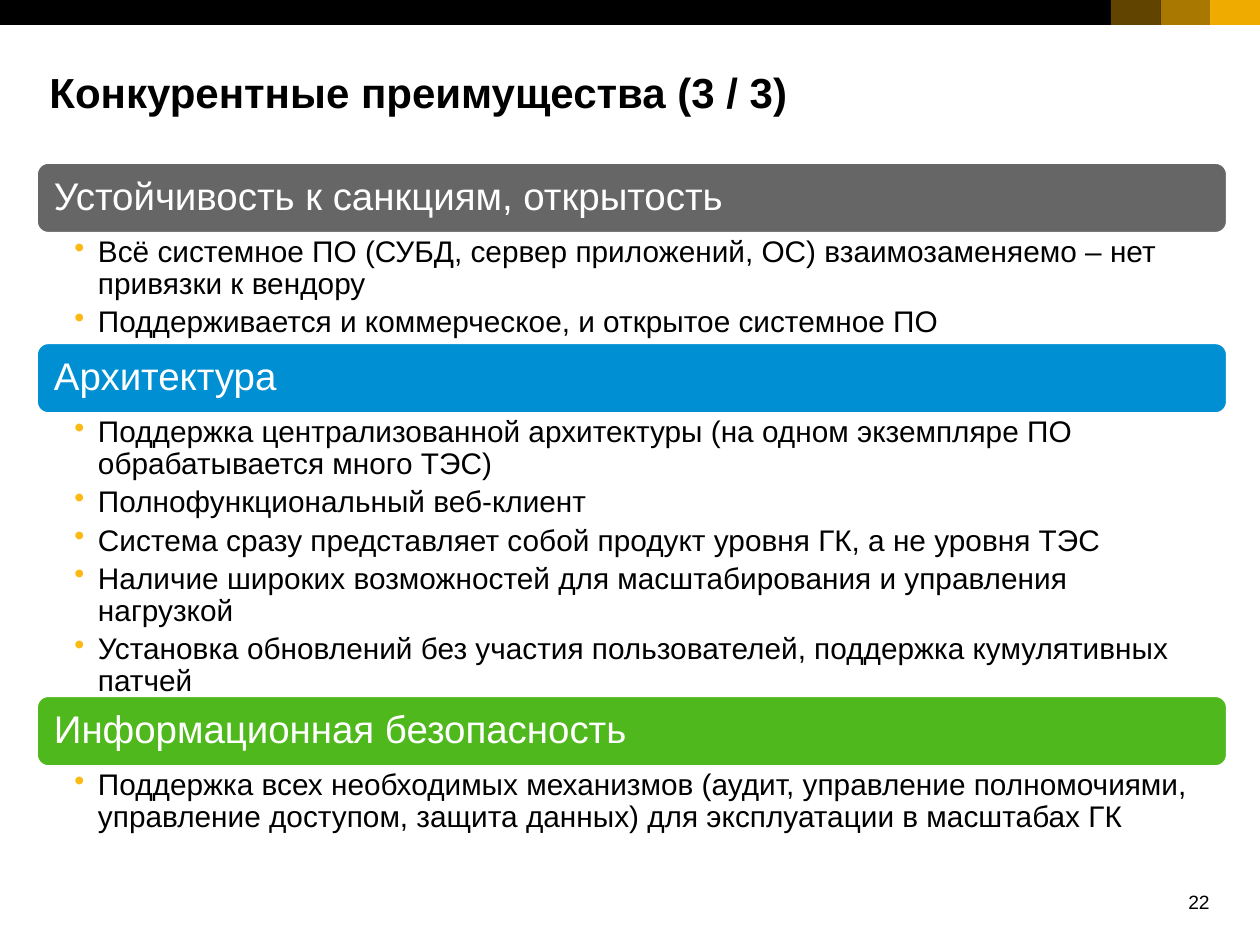
from dataclasses import dataclass

from lxml import etree
from pptx import Presentation
from pptx import util as u
from pptx.dml.color import RGBColor
from pptx.enum import shapes, text
from pptx.oxml import ns

HUES = {
    "black": "000000", "white": "FFFFFF", "gold": "F0AB00", "dot": "FDB913",
    "gray": "666666", "blue": "008FD3", "green": "4FB81C",
}
WIDE, HIGH = 720, 540
LEFT, TOP, SPAN, HEAD = 20.9, 92.9, 680.4, 40.4
BAR, STRIPE = 14.2, 28.4


@dataclass
class Part:
    head: str
    hue: str
    high: float
    items: list[str]


PARTS = [
    Part("Устойчивость к санкциям, открытость", "gray", 62.6, [
        "Всё системное ПО (СУБД, сервер приложений, ОС) взаимозаменяемо – нет привязки к вендору",
        "Поддерживается и коммерческое, и открытое системное ПО",
    ]),
    Part("Архитектура", "blue", 161.3, [
        "Поддержка централизованной архитектуры (на одном экземпляре ПО обрабатывается много ТЭС)",
        "Полнофункциональный веб-клиент",
        "Система сразу представляет собой продукт уровня ГК, а не уровня ТЭС",
        "Наличие широких возможностей для масштабирования и управления нагрузкой",
        "Установка обновлений без участия пользователей, поддержка кумулятивных патчей",
    ]),
    Part("Информационная безопасность", "green", 40.3, [
        "Поддержка всех необходимых механизмов (аудит, управление полномочиями, "
        "управление доступом, защита данных) для эксплуатации в масштабах ГК",
    ]),
]


def paint(hue: str) -> RGBColor:
    return RGBColor.from_string(HUES[hue])


def add_dot(para) -> None:
    props = para._p.get_or_add_pPr()
    props.set("marL", str(u.Pt(13.5)))
    props.set("indent", str(-u.Pt(13.5)))
    tint = etree.SubElement(props, ns.qn("a:buClr"))
    etree.SubElement(tint, ns.qn("a:srgbClr"), val=HUES["dot"])
    etree.SubElement(props, ns.qn("a:buChar"), char="•")


def write(shape, lines: list[str], *, size: float, hue: str = "black", bold: bool = False,
          align=text.PP_ALIGN.LEFT, anchor=text.MSO_ANCHOR.TOP, pads=(0, 0, 0, 0),
          pitch: float = 1, after: float = 0, dots: bool = False) -> None:
    frame = shape.text_frame
    frame.word_wrap = True
    frame.vertical_anchor = anchor
    (frame.margin_left, frame.margin_top,
     frame.margin_right, frame.margin_bottom) = map(u.Pt, pads)
    for num, line in enumerate(lines):
        para = frame.add_paragraph() if num else frame.paragraphs[0]
        para.alignment = align
        para.line_spacing = pitch
        para.space_after = u.Pt(after)
        if dots:
            para.level = 1
            add_dot(para)
        run = para.add_run()
        run.text = line
        run.font.name = "Arial"
        run.font.size = u.Pt(size)
        run.font.bold = bold
        run.font.color.rgb = paint(hue)


def add_box(slide, x: float, y: float, w: float, h: float):
    return slide.shapes.add_textbox(*map(u.Pt, (x, y, w, h)))


def add_block(slide, kind, x: float, y: float, w: float, h: float, hue: str, alpha: int = 100):
    shape = slide.shapes.add_shape(kind, *map(u.Pt, (x, y, w, h)))
    shape.shadow.inherit = False
    shape.fill.solid()
    shape.fill.fore_color.rgb = paint(hue)
    shape.line.fill.background()
    if alpha < 100:
        tint = shape._element.spPr.find(".//" + ns.qn("a:srgbClr"))
        etree.SubElement(tint, ns.qn("a:alpha"), val=str(alpha * 1000))
    return shape


def add_part(slide, part: Part, top: float) -> float:
    """Draw a heading with its list and return the bottom edge."""
    head = add_block(slide, shapes.MSO_SHAPE.ROUNDED_RECTANGLE, LEFT, top, SPAN, HEAD, part.hue)
    head.line.color.rgb = paint("white")
    head.line.width = u.Pt(1.5)
    write(head, [part.head], size=22, hue="white", anchor=text.MSO_ANCHOR.MIDDLE,
          pads=(8, 0, 8, 0), pitch=0.9)
    body = add_box(slide, LEFT, top + HEAD, SPAN, part.high)
    write(body, part.items, size=17, pads=(21.6, 2, 12, 2), pitch=0.9, after=3.4, dots=True)
    return top + HEAD + part.high


def main() -> None:
    deck = Presentation()
    deck.slide_width, deck.slide_height = u.Pt(WIDE), u.Pt(HIGH)
    slide = deck.slides.add_slide(deck.slide_layouts[6])

    # Top bar with stripes fading to the left
    rect = shapes.MSO_SHAPE.RECTANGLE
    add_block(slide, rect, 0, 0, WIDE, BAR, "black")
    for num, alpha in enumerate((100, 70, 40), 1):
        add_block(slide, rect, WIDE - num * STRIPE, 0, STRIPE, BAR, "gold", alpha)

    # Title and page number
    write(add_box(slide, 28.3, 38.2, 691.7, 28.8),
          ["Конкурентные преимущества (3 / 3)"], size=24, bold=True)
    write(add_box(slide, 671, 509, 20.3, 13.7), ["22"], size=11, align=text.PP_ALIGN.RIGHT)

    # Headings with lists, stacked
    top = TOP
    for part in PARTS:
        top = add_part(slide, part, top)

    deck.save("out.pptx")


if __name__ == "__main__":
    main()
